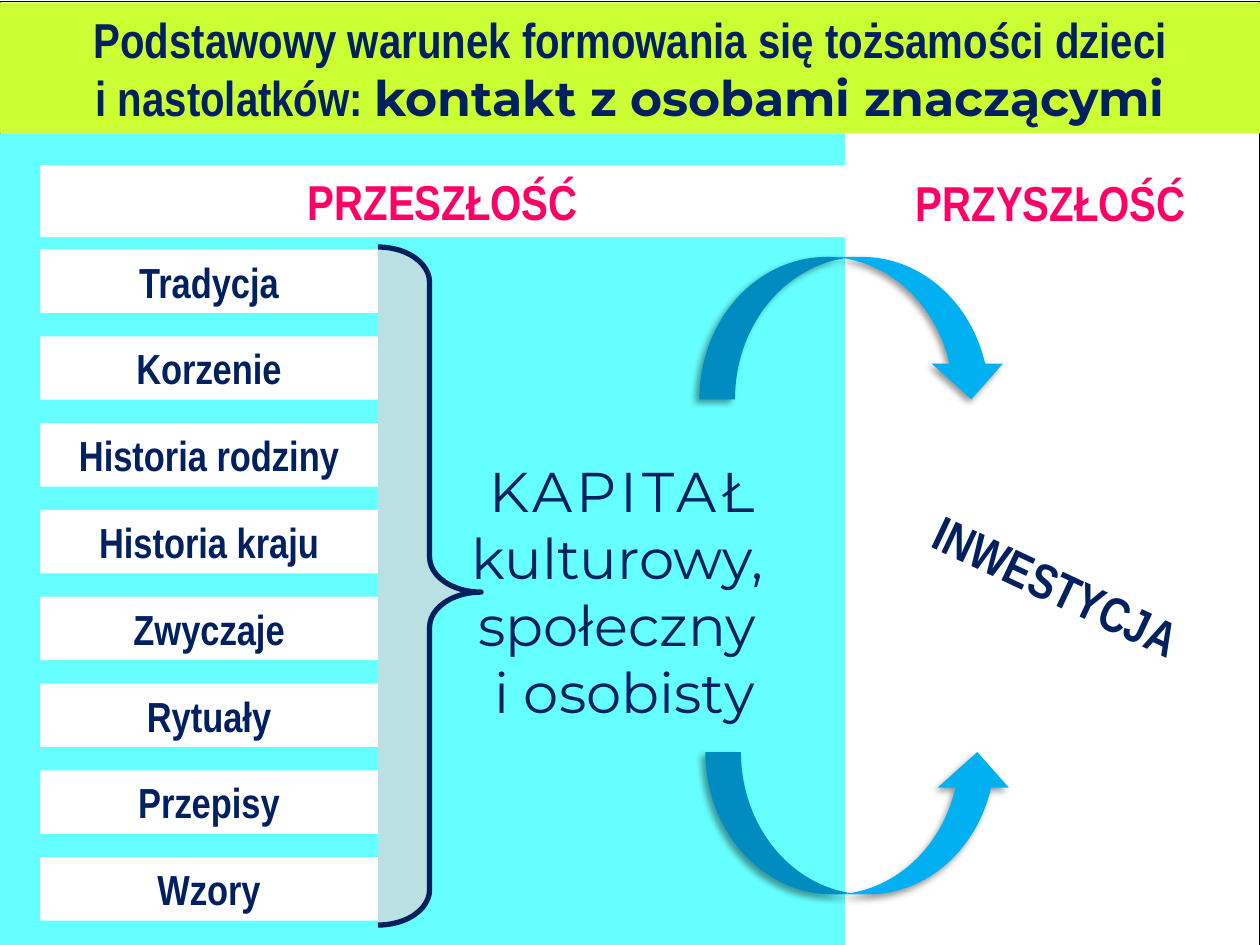
from lxml import etree
from pptx import Presentation
from pptx.dml.color import RGBColor
from pptx.enum.shapes import MSO_SHAPE
from pptx.enum.text import MSO_ANCHOR, PP_ALIGN
from pptx.oxml.ns import qn
from pptx.util import Cm, Pt

RECTANGLE = MSO_SHAPE.RECTANGLE
BRACE = MSO_SHAPE.RIGHT_BRACE
CURVED_ARROW = MSO_SHAPE.CURVED_DOWN_ARROW
MIDDLE = MSO_ANCHOR.MIDDLE
CENTER = PP_ALIGN.CENTER

NAVY, PINK, WHITE = "002060", "FF0066", "FFFFFF"
CYAN, LIME, BLUE, GREY = "66FFFF", "CCFF33", "00B0F0", "BBE0E3"

HEADING = {"name": "Arial Narrow", "size": Pt(28), "bold": True}
KEY_PHRASE = {"name": "Montserrat", "size": Pt(28), "bold": True}
ITEM = {"name": "Arial Narrow", "size": Pt(24), "bold": True}
CAPITAL = {"name": "Montserrat", "size": Pt(32), "bold": False}

ITEMS = ["Tradycja", "Korzenie", "Historia rodziny", "Historia kraju",
         "Zwyczaje", "Rytuały", "Przepisy", "Wzory"]


def color(value):
    return RGBColor.from_string(value)


def add_box(slide, kind, box, fill=None, line=None, line_width=0.75):
    shape = slide.shapes.add_shape(kind, *(Cm(length) for length in box))
    shape.shadow.inherit = False
    if fill:
        shape.fill.solid()
        shape.fill.fore_color.rgb = color(fill)
    else:
        shape.fill.background()
    if line:
        shape.line.color.rgb = color(line)
        shape.line.width = Pt(line_width)
    else:
        shape.line.fill.background()
    return shape


def add_text(shape, runs, text_color):
    """Write one centred paragraph; runs are (text, format) pairs."""
    frame = shape.text_frame
    frame.word_wrap = True
    frame.vertical_anchor = MIDDLE
    paragraph = frame.paragraphs[0]
    paragraph.alignment = CENTER
    added = []
    for text, text_format in runs:
        for index, part in enumerate(text.split("\n")):
            if index:
                paragraph.add_line_break()
            run = paragraph.add_run()
            run.text = part
            for name, value in text_format.items():
                setattr(run.font, name, value)
            run.font.color.rgb = color(text_color)
            added.append(run)
    return added


def add_shadow(shape, value, alpha, blur, distance, angle):
    effects = shape._element.spPr.find(qn("a:effectLst"))
    shadow = etree.SubElement(
        effects, qn("a:outerShdw"), blurRad=str(Pt(blur)),
        dist=str(Pt(distance)), dir=str(angle * 60000), rotWithShape="0")
    tint = etree.SubElement(shadow, qn("a:srgbClr"), val=value)
    etree.SubElement(tint, qn("a:alpha"), val=str(alpha * 1000))


def add_title(slide, box):
    band = add_box(slide, RECTANGLE, box, LIME)
    add_text(band, [
        ("Podstawowy warunek formowania się tożsamości dzieci\n"
         "i nastolatków: ", HEADING),
        ("kontakt z osobami znaczącymi", KEY_PHRASE)], NAVY)


def add_past(slide, box):
    left, top, width, height = box
    add_box(slide, RECTANGLE, box, CYAN)
    margin = 0.81
    header = add_box(slide, RECTANGLE,
                     (left + margin, top + 0.64, width - margin, 1.45), WHITE)
    add_text(header, [("PRZESZŁOŚĆ", HEADING)], PINK)

    # Column of sources
    item_width, item_height, step = 6.81, 1.28, 1.75
    for index, label in enumerate(ITEMS):
        item = add_box(slide, RECTANGLE,
                       (left + margin, top + 2.34 + index * step,
                        item_width, item_height), WHITE)
        add_text(item, [(label, ITEM)], NAVY)

    # Brace that gathers them
    brace = add_box(slide, BRACE, (left + margin + item_width, top + 2.29,
                                   2.08, 13.67), GREY, NAVY, 3)
    brace.adjustments[0] = 0.342
    brace.adjustments[1] = 0.509

    # Capital
    capital = slide.shapes.add_textbox(
        Cm(left + 7.98), Cm(top + 6.35), Cm(9.22), Cm(5.74))
    runs = add_text(capital, [
        ("KAPITAŁ ", CAPITAL),
        ("kulturowy, \nspołeczny \ni osobisty", CAPITAL)], NAVY)
    runs[0].font._element.set("spc", "250")


def add_future(slide, box):
    left, top, width, height = box
    header = add_box(slide, RECTANGLE, (left, top + 0.66, width, 1.45), WHITE)
    add_text(header, [("PRZYSZŁOŚĆ", HEADING)], PINK)
    investment = slide.shapes.add_textbox(
        Cm(left - 1.34), Cm(top + 8.38), Cm(11.2), Cm(1.45))
    add_text(investment, [("INWESTYCJA", HEADING)], NAVY)
    investment.rotation = 25.3


def add_arrows(slide, box):
    """Two arrows, along the top and the bottom of the box."""
    left, top, width, height = box
    arrow_width, arrow_height = 6.2, 2.87
    places = [(left, top),
              (left + width - arrow_width, top + height - arrow_height)]
    arrows = [add_box(slide, CURVED_ARROW, (*place, arrow_width, arrow_height),
                      BLUE) for place in places]
    for arrow in arrows:
        add_shadow(arrow, "000000", 40, 4, 3, 135)
    arrows[1].rotation = 180
    arrows[1]._element.spPr.find(qn("a:xfrm")).set("flipH", "1")


def main():
    presentation = Presentation()
    presentation.slide_width = Cm(25.4)
    presentation.slide_height = Cm(19.05)
    slide = presentation.slides.add_slide(presentation.slide_layouts[6])

    # Frame
    frame = add_box(slide, RECTANGLE, (0, 0.03, 25.4, 19.05), line="000000")
    add_shadow(frame, "808080", 100, 0, 2.8, 45)

    # Regions
    add_past(slide, (0, 2.69, 17.04, 16.66))
    add_title(slide, (0, 0.05, 25.4, 2.64))
    add_future(slide, (17.04, 2.69, 8.28, 16.36))
    add_arrows(slide, (14.1, 5.18, 6.32, 12.85))

    presentation.save("out.pptx")


if __name__ == "__main__":
    main()
